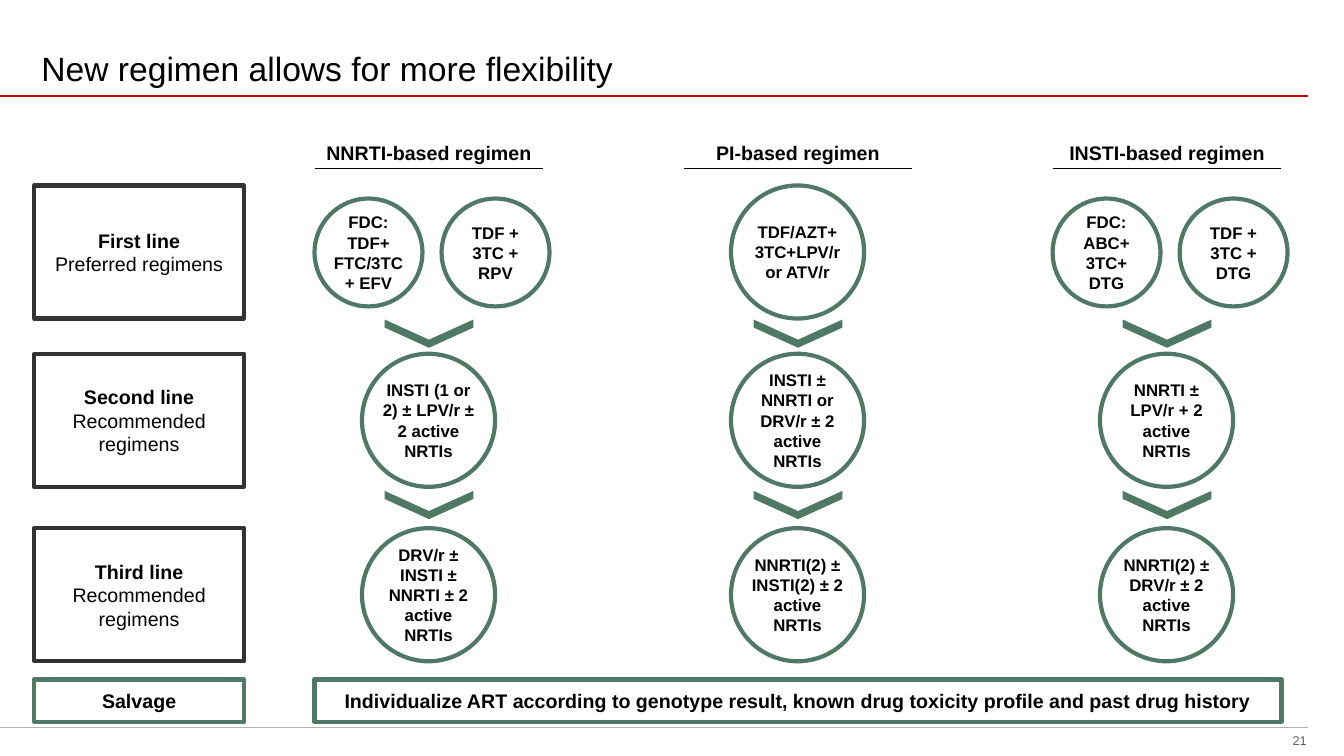
import pptx
import pptx.util
import pptx.dml.color
import pptx.enum.shapes
import pptx.enum.text
import pptx.oxml

Inches = pptx.util.Inches
Shape = pptx.enum.shapes.MSO_SHAPE
Anchor = pptx.enum.text.MSO_ANCHOR
Align = pptx.enum.text.PP_ALIGN

BLACK, WHITE, RED = "000000", "FFFFFF", "CC0000"
GREEN, CHARCOAL = "507867", "333333"
GREY, RULE_GREY = "5C5C5C", "B4B4B4"

COLUMN_LEFT, COLUMN_STEP, COLUMN_WIDTH = 3.12, 3.66, 2.27
LABEL_LEFT, LABEL_WIDTH = 0.34, 2.08
SMALL_CIRCLE, SMALL_STEP, SMALL_TOP = 1.07, 1.26, 1.97
BIG_CIRCLE, BIG_OFFSET = 1.32, 0.47
ROW_TOPS = [1.84, 3.51, 5.24]
CHEVRON_TOPS = [3.17, 4.87]
SALVAGE_TOP, SALVAGE_HEIGHT = 6.74, 0.42

LINES_OF_THERAPY = [
    ("First line", "Preferred regimens"),
    ("Second line", "Recommended regimens"),
    ("Third line", "Recommended regimens"),
]

# Heading, then the options of each line of therapy
REGIMENS = [
    ("NNRTI-based regimen", [
        ["FDC: TDF+ FTC/3TC+ EFV", "TDF + 3TC + RPV"],
        ["INSTI (1 or 2) ± LPV/r ± 2 active NRTIs"],
        ["DRV/r ± INSTI ± NNRTI ± 2 active NRTIs"]]),
    ("PI-based regimen", [
        ["TDF/AZT+ 3TC+LPV/r or ATV/r"],
        ["INSTI ± NNRTI or DRV/r ± 2 active NRTIs"],
        ["NNRTI(2) ± INSTI(2) ± 2 active NRTIs"]]),
    ("INSTI-based regimen", [
        ["FDC: ABC+ 3TC+ DTG", "TDF + 3TC + DTG"],
        ["NNRTI ± LPV/r + 2 active NRTIs"],
        ["NNRTI(2) ± DRV/r ± 2 active NRTIs"]]),
]


def rgb(color):
    return pptx.dml.color.RGBColor.from_string(color)


def add_run(paragraph, text, size, color=BLACK, bold=False):
    run = paragraph.add_run()
    run.text = text
    run.font.name = "Arial"
    run.font.size = pptx.util.Pt(size)
    run.font.bold = bold
    run.font.color.rgb = rgb(color)


def format_frame(frame, anchor, align, inset):
    """Set wrapping, anchor and insets; return the first paragraph."""
    frame.word_wrap = True
    frame.vertical_anchor = anchor
    frame.margin_left = frame.margin_right = Inches(inset)
    frame.margin_top = frame.margin_bottom = Inches(inset)
    paragraph = frame.paragraphs[0]
    paragraph.alignment = align
    return paragraph


def add_outlined(slide, kind, left, top, width, height, color, inset):
    """Add a white shape with a thick outline; return its paragraph."""
    shape = slide.shapes.add_shape(
        kind, Inches(left), Inches(top), Inches(width), Inches(height))
    shape.shadow.inherit = False
    shape.fill.solid()
    shape.fill.fore_color.rgb = rgb(WHITE)
    shape.line.color.rgb = rgb(color)
    shape.line.width = pptx.util.Pt(3)
    return format_frame(shape.text_frame, Anchor.MIDDLE, Align.CENTER, inset)


def add_circle(slide, left, top, diameter, text):
    paragraph = add_outlined(
        slide, Shape.OVAL, left, top, diameter, diameter, GREEN, 0)
    add_run(paragraph, text, 12, bold=True)


def add_box(slide, left, top, width, height, color, heading, detail=None):
    paragraph = add_outlined(
        slide, Shape.RECTANGLE, left, top, width, height, color, 0.04)
    add_run(paragraph, heading, 14, bold=True)
    if detail:
        paragraph.add_line_break()
        add_run(paragraph, detail, 14)


def add_rule(slide, left, right, y, color, width):
    connector = slide.shapes.add_connector(
        pptx.enum.shapes.MSO_CONNECTOR.STRAIGHT,
        Inches(left), Inches(y), Inches(right), Inches(y))
    connector.line.color.rgb = rgb(color)
    connector.line.width = pptx.util.Pt(width)
    connector._element.spPr.append(pptx.oxml.parse_xml(
        '<a:effectLst xmlns:a='
        '"http://schemas.openxmlformats.org/drawingml/2006/main"/>'))


def add_text(slide, left, top, width, height, text, size, color, bold,
             anchor, align, inset):
    box = slide.shapes.add_textbox(
        Inches(left), Inches(top), Inches(width), Inches(height))
    paragraph = format_frame(box.text_frame, anchor, align, inset)
    add_run(paragraph, text, size, color, bold)


def add_chevron(slide, center, top):
    half, arm, drop = 0.44, 0.08, 0.2
    points = [(center + half, top + arm), (center + half, top),
              (center, top + drop), (center - half, top),
              (center - half, top + arm), (center, top + drop + arm)]
    points = [(Inches(x), Inches(y)) for x, y in points]
    builder = slide.shapes.build_freeform(*points[0])
    builder.add_line_segments(points[1:], close=True)
    chevron = builder.convert_to_shape()
    chevron.shadow.inherit = False
    chevron.fill.solid()
    chevron.fill.fore_color.rgb = rgb(GREEN)
    chevron.line.fill.background()


def add_title(slide, text):
    title = slide.shapes.title
    title.left, title.top = Inches(0.37), Inches(0)
    title.width, title.height = Inches(12.6), Inches(0.96)
    paragraph = format_frame(
        title.text_frame, Anchor.BOTTOM, Align.LEFT, 0.04)
    title.text_frame.margin_bottom = Inches(0.08)
    add_run(paragraph, text, 24)


def add_regimen(slide, left, heading, options_by_line):
    add_text(slide, left, 1.36, COLUMN_WIDTH, 0.31, heading, 14, BLACK, True,
             Anchor.BOTTOM, Align.CENTER, 0.04)
    add_rule(slide, left, left + COLUMN_WIDTH, 1.67, BLACK, 0.75)
    for top, options in zip(ROW_TOPS, options_by_line):
        if len(options) == 1:
            add_circle(slide, left + BIG_OFFSET, top, BIG_CIRCLE, options[0])
            continue
        for index, option in enumerate(options):
            add_circle(slide, left + index * SMALL_STEP, SMALL_TOP,
                       SMALL_CIRCLE, option)
    for top in CHEVRON_TOPS:
        add_chevron(slide, left + COLUMN_WIDTH / 2, top)


def main():
    presentation = pptx.Presentation()
    presentation.slide_width = Inches(13.33)
    presentation.slide_height = Inches(7.5)
    slide = presentation.slides.add_slide(presentation.slide_layouts[5])

    add_title(slide, "New regimen allows for more flexibility")
    add_rule(slide, 0, 12.97, 0.95, RED, 1.5)
    add_rule(slide, 0, 12.97, 7.22, RULE_GREY, 0.75)
    add_text(slide, 12.46, 7.27, 0.5, 0.15, "21", 9, GREY, False,
             Anchor.MIDDLE, Align.RIGHT, 0)

    for top, (heading, detail) in zip(ROW_TOPS, LINES_OF_THERAPY):
        add_box(slide, LABEL_LEFT, top, LABEL_WIDTH, BIG_CIRCLE, CHARCOAL,
                heading, detail)
    for index, (heading, options_by_line) in enumerate(REGIMENS):
        add_regimen(slide, COLUMN_LEFT + index * COLUMN_STEP, heading,
                    options_by_line)

    add_box(slide, LABEL_LEFT, SALVAGE_TOP, LABEL_WIDTH, SALVAGE_HEIGHT,
            GREEN, "Salvage")
    add_box(slide, COLUMN_LEFT, SALVAGE_TOP, 2 * COLUMN_STEP + COLUMN_WIDTH,
            SALVAGE_HEIGHT, GREEN,
            "Individualize ART according to genotype result, "
            "known drug toxicity profile and past drug history")
    presentation.save("out.pptx")


if __name__ == "__main__":
    main()
